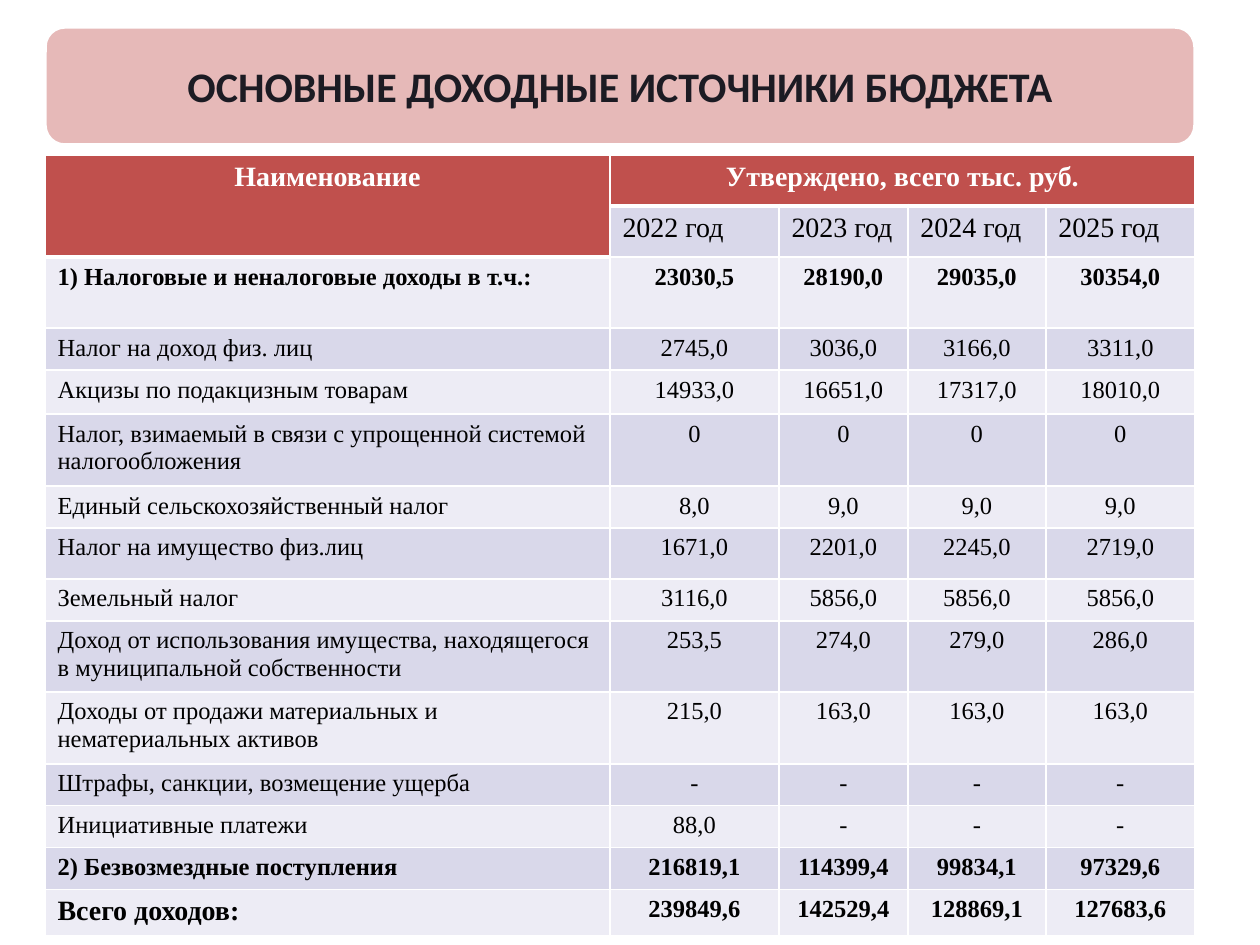
from lxml.etree import SubElement
from pptx import Presentation
from pptx.dml.color import RGBColor
from pptx.enum.shapes import MSO_SHAPE
from pptx.enum.text import MSO_ANCHOR, PP_ALIGN
from pptx.oxml.ns import qn
from pptx.util import Emu, Pt

# Content
TITLE = "ОСНОВНЫЕ ДОХОДНЫЕ ИСТОЧНИКИ БЮДЖЕТА"
NAME_HEADING = "Наименование"
AMOUNT_HEADING = "Утверждено, всего тыс. руб."
YEARS = ["2022 год", "2023 год", "2024 год", "2025 год"]
# Row height, name, four amounts
INCOME = [
    (71, "1) Налоговые и неналоговые доходы в т.ч.:", "23030,5", "28190,0", "29035,0", "30354,0"),
    (42, "Налог на доход физ. лиц", "2745,0", "3036,0", "3166,0", "3311,0"),
    (44, "Акцизы по подакцизным товарам", "14933,0", "16651,0", "17317,0", "18010,0"),
    (72, "Налог, взимаемый в связи с упрощенной системой налогообложения", "0", "0", "0", "0"),
    (42, "Единый сельскохозяйственный налог", "8,0", "9,0", "9,0", "9,0"),
    (51, "Налог на имущество физ.лиц", "1671,0", "2201,0", "2245,0", "2719,0"),
    (42, "Земельный налог", "3116,0", "5856,0", "5856,0", "5856,0"),
    (71, "Доход от использования имущества, находящегося в муниципальной собственности",
     "253,5", "274,0", "279,0", "286,0"),
    (72, "Доходы от продажи материальных и нематериальных активов",
     "215,0", "163,0", "163,0", "163,0"),
    (42, "Штрафы, санкции, возмещение ущерба", "-", "-", "-", "-"),
    (42, "Инициативные платежи", "88,0", "-", "-", "-"),
    (42, "2) Безвозмездные поступления", "216819,1", "114399,4", "99834,1", "97329,6"),
    (46, "Всего доходов:", "239849,6", "142529,4", "128869,1", "127683,6"),
]
LAST = len(INCOME) - 1
BOLD_ROWS = {0, LAST - 1, LAST}
HEADER_HEIGHT = 51
COLUMN_WIDTHS = [565, 169, 129, 138, 149]
COLORS = {"banner": "E6B9B8", "title": "1C1B23", "header": "C0504D",
          "dark_band": "D9D8EA", "light_band": "EDECF5",
          "white": "FFFFFF", "black": "000000"}
SERIF = "Times New Roman"


def px(pixels):
    return Emu(round(pixels * 914400 / 126))


def color(name):
    return RGBColor.from_string(COLORS[name])


def add_text(frame, text, size, font, color_name, bold, align):
    paragraph = frame.paragraphs[0]
    paragraph.alignment = align
    run = paragraph.add_run()
    run.text = text
    run.font.size = Pt(size)
    run.font.name = font
    run.font.bold = bold
    run.font.color.rgb = color(color_name)


def set_borders(cell, top, bottom):
    properties = cell._tc.get_or_add_tcPr()
    widths = {"a:lnL": 1, "a:lnR": 1, "a:lnT": top, "a:lnB": bottom}
    for position, (tag, width) in enumerate(widths.items()):
        line = SubElement(properties, qn(tag), w=str(Pt(width)))
        fill = SubElement(line, qn("a:solidFill"))
        SubElement(fill, qn("a:srgbClr"), val=COLORS["white"])
        properties.insert(position, line)


def fill_cell(cell, text, fill, size=14, color_name="black", bold=False,
              align=PP_ALIGN.CENTER):
    cell.fill.solid()
    cell.fill.fore_color.rgb = color(fill)
    if text:
        add_text(cell.text_frame, text, size, SERIF, color_name, bold, align)


presentation = Presentation()
presentation.slide_width, presentation.slide_height = px(1260), px(945)
slide = presentation.slides.add_slide(presentation.slide_layouts[6])

# Title banner
banner = slide.shapes.add_shape(MSO_SHAPE.ROUNDED_RECTANGLE, px(45), px(27), px(1150), px(118))
banner.shadow.inherit = False
banner.fill.solid()
banner.fill.fore_color.rgb = color("banner")
banner.line.color.rgb = color("white")
banner.line.width = Pt(2)
banner.text_frame.word_wrap = True
banner.text_frame.vertical_anchor = MSO_ANCHOR.MIDDLE
add_text(banner.text_frame, TITLE, 24, "Calibri", "title", True, PP_ALIGN.CENTER)

# Table grid
heights = [HEADER_HEIGHT] * 2 + [row[0] for row in INCOME]
table = slide.shapes.add_table(len(heights), len(COLUMN_WIDTHS), px(45), px(155),
                               px(sum(COLUMN_WIDTHS)), px(sum(heights))).table
table.first_row = table.horz_banding = False
for column, width in zip(table.columns, COLUMN_WIDTHS):
    column.width = px(width)
for row, height in zip(table.rows, heights):
    row.height = px(height)

# Headings
table.cell(0, 0).merge(table.cell(1, 0))
table.cell(0, 1).merge(table.cell(0, len(YEARS)))
for index in range(len(COLUMN_WIDTHS)):
    heading = {0: NAME_HEADING, 1: AMOUNT_HEADING}.get(index)
    fill_cell(table.cell(0, index), heading, "header", 16, "white", True)
fill_cell(table.cell(1, 0), None, "header")
for index, year in enumerate(YEARS, 1):
    fill_cell(table.cell(1, index), year, "dark_band", 16, align=PP_ALIGN.LEFT)

# Income rows
for index, (_, name, *amounts) in enumerate(INCOME):
    band = "dark_band" if index % 2 else "light_band"
    bold = index in BOLD_ROWS
    fill_cell(table.cell(index + 2, 0), name, band, 16 if index == LAST else 14,
              bold=bold, align=PP_ALIGN.LEFT)
    for column, amount in enumerate(amounts, 1):
        fill_cell(table.cell(index + 2, column), amount, band, bold=bold)

# Borders, thick below the red headings
for row in range(len(heights)):
    for column in range(len(COLUMN_WIDTHS)):
        heading_end = 1 if column == 0 else 0
        top = 3 if row == heading_end + 1 else 1
        bottom = 3 if row == heading_end or (row, column) == (0, 0) else 1
        set_borders(table.cell(row, column), top, bottom)

presentation.save("out.pptx")
